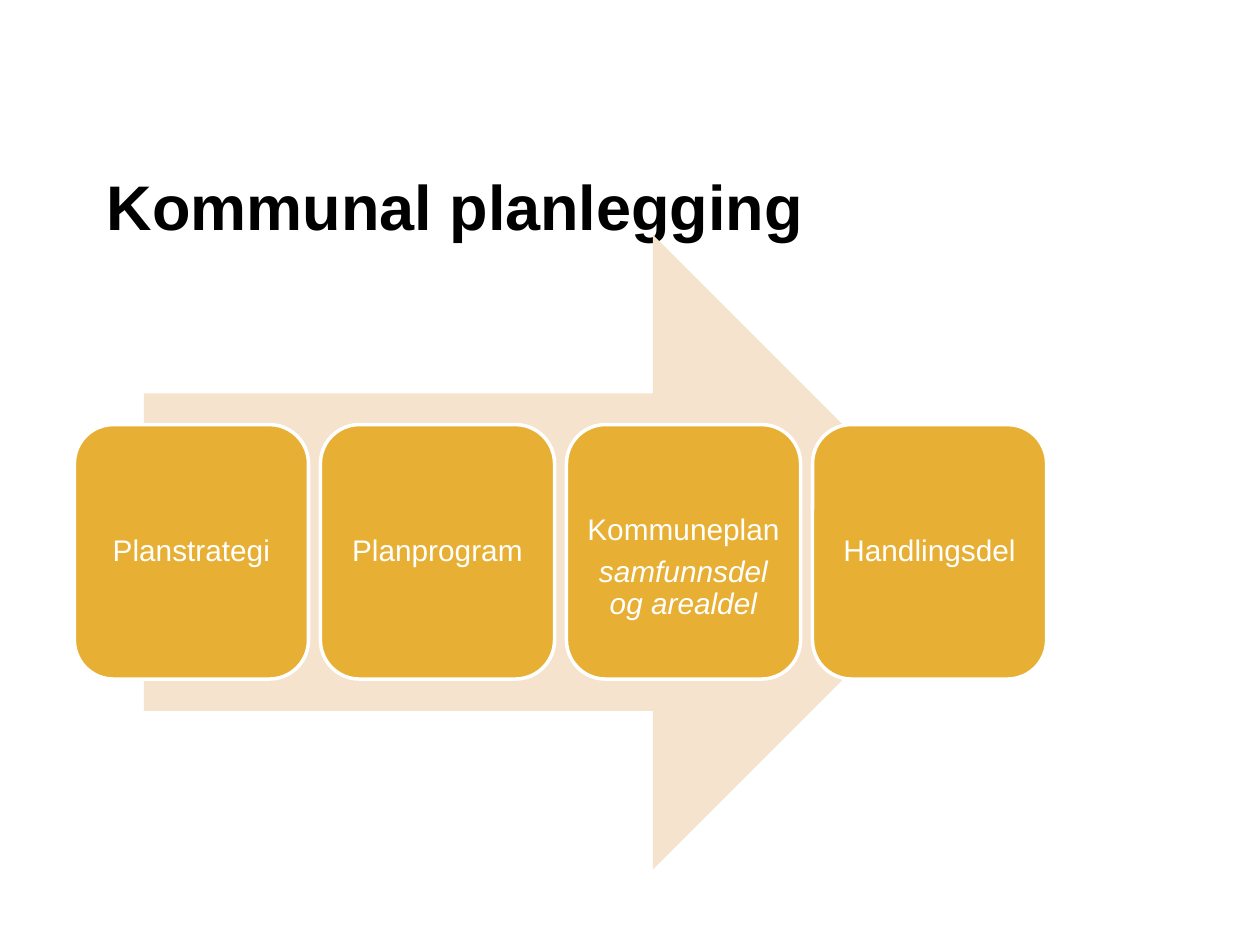
import pptx
import pptx.util
import pptx.dml.color
import pptx.enum.shapes
import pptx.enum.text

Cm = pptx.util.Cm
Pt = pptx.util.Pt
RGBColor = pptx.dml.color.RGBColor
MSO_SHAPE = pptx.enum.shapes.MSO_SHAPE
PP_ALIGN = pptx.enum.text.PP_ALIGN
MSO_ANCHOR = pptx.enum.text.MSO_ANCHOR

BLACK = RGBColor(0x00, 0x00, 0x00)
WHITE = RGBColor(0xFF, 0xFF, 0xFF)
SAND = RGBColor(0xF6, 0xE3, 0xCE)
GOLD = RGBColor(0xE7, 0xAF, 0x34)

STEPS = [
    ["Planstrategi"],
    ["Planprogram"],
    ["Kommuneplan", "samfunnsdel og arealdel"],
    ["Handlingsdel"],
]
STEP_LEFT, STEP_PITCH = 1.5, 4.96


def write(p, text, size=17, color=WHITE, bold=False, italic=False,
          align=PP_ALIGN.CENTER, after=6):
    """Write one formatted run into a paragraph."""
    p.alignment = align
    p.line_spacing = 0.9
    p.space_after = Pt(after)
    r = p.add_run()
    r.text = text
    r.font.name = "Arial"
    r.font.size = Pt(size)
    r.font.bold = bold
    r.font.italic = italic
    r.font.color.rgb = color


def add_title(s, text):
    """Place and fill the title placeholder."""
    sp = s.shapes.title
    sp.left, sp.top, sp.width, sp.height = Cm(1.9), Cm(3.18), Cm(22.66), Cm(2.13)
    tf = sp.text_frame
    tf.auto_size = pptx.enum.text.MSO_AUTO_SIZE.NONE
    tf.vertical_anchor = MSO_ANCHOR.MIDDLE
    write(tf.paragraphs[0], text, size=36, color=BLACK, bold=True,
          align=PP_ALIGN.LEFT, after=0)


def add_filled(shapes, kind, left, top, width, height, fill):
    """Add a flat filled shape without an outline."""
    sp = shapes.add_shape(kind, Cm(left), Cm(top), Cm(width), Cm(height))
    sp.shadow.inherit = False
    sp.fill.solid()
    sp.fill.fore_color.rgb = fill
    sp.line.fill.background()
    return sp


def add_step(shapes, left, lines):
    """Add one rounded step with its heading and optional italic detail."""
    sp = add_filled(shapes, MSO_SHAPE.ROUNDED_RECTANGLE, left, 8.56, 4.72, 5.13, GOLD)
    sp.line.fill.solid()
    sp.line.fill.fore_color.rgb = WHITE
    sp.line.width = Pt(2)
    tf = sp.text_frame
    tf.word_wrap = True
    tf.vertical_anchor = MSO_ANCHOR.MIDDLE
    tf.margin_left = tf.margin_right = Cm(0.14)
    tf.margin_bottom = Cm(0.18)
    tf.margin_top = Cm(0.83 if len(lines) > 1 else 0.18)
    for i, line in enumerate(lines):
        p = tf.add_paragraph() if i else tf.paragraphs[0]
        write(p, line, italic=i > 0)


def main():
    """Build the planning process slide."""
    prs = pptx.Presentation()
    prs.slide_width, prs.slide_height = Cm(25.4), Cm(19.05)
    s = prs.slides.add_slide(prs.slide_layouts[5])
    add_title(s, "Kommunal planlegging")
    process = s.shapes.add_group_shape().shapes
    add_filled(process, MSO_SHAPE.RIGHT_ARROW, 2.9, 4.73, 16.66, 12.8, SAND)
    for i, lines in enumerate(STEPS):
        add_step(process, STEP_LEFT + i * STEP_PITCH, lines)
    prs.save("out.pptx")


if __name__ == "__main__":
    main()
